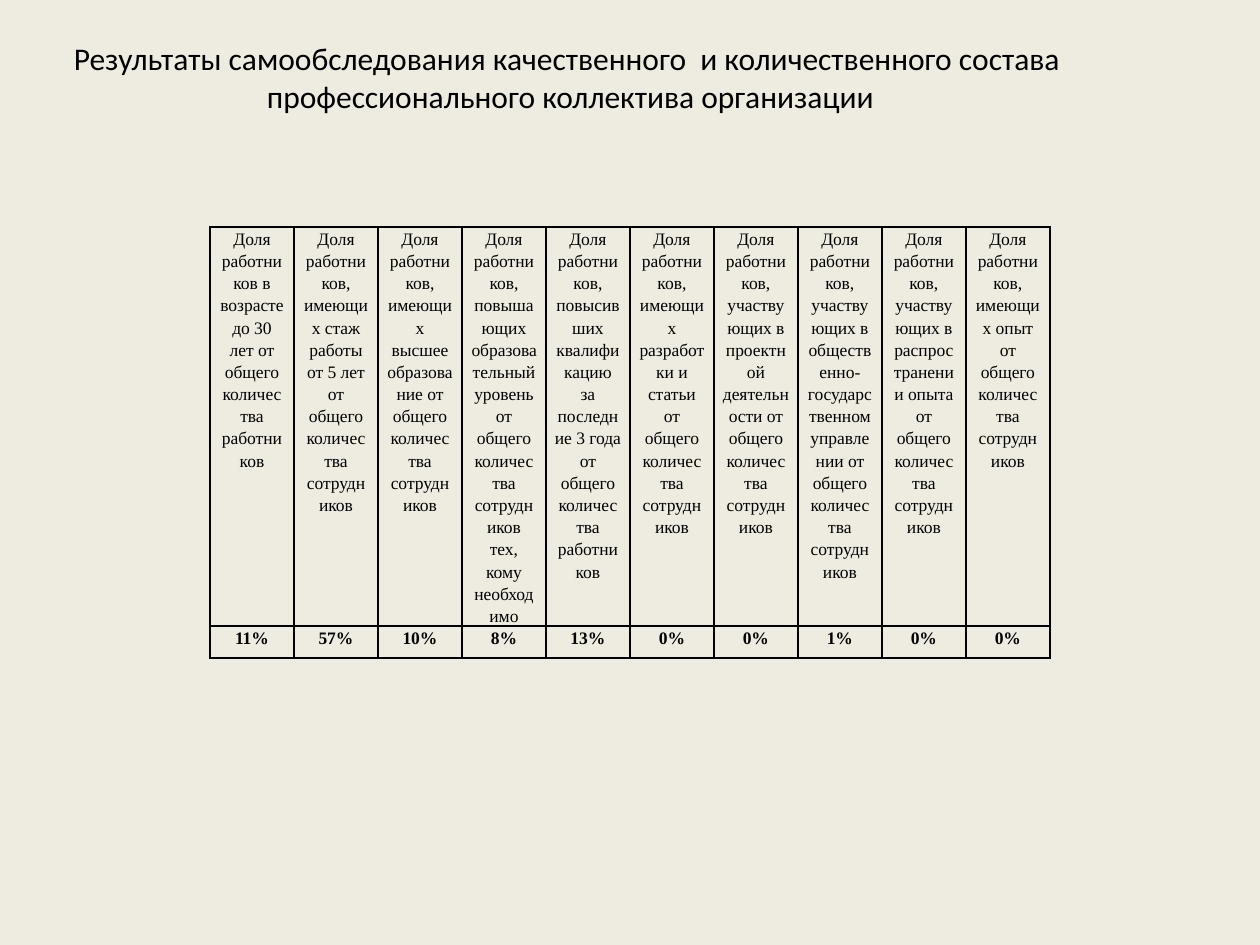
from copy import deepcopy

from lxml.etree import SubElement
from pptx import Presentation
from pptx.dml.color import RGBColor
from pptx.enum.text import MSO_ANCHOR, PP_ALIGN
from pptx.oxml.ns import qn
from pptx.util import Pt

EMU_PER_PX = 914400 / 126
BLACK = "000000"
CREAM = "EEECE1"

TITLE_LINES = [
    "Результаты самообследования качественного  и количественного состава",
    " профессионального коллектива организации",
]
STAFF_SHARES = [
    ("Доля работников в возрасте до 30 лет от общего количества работников", "11%"),
    ("Доля работников, имеющих стаж работы от 5 лет от общего количества сотрудников", "57%"),
    ("Доля работников, имеющих высшее образование от общего количества сотрудников", "10%"),
    ("Доля работников, повышающих образовательный уровень от общего количества "
     "сотрудников тех, кому необходимо", "8%"),
    ("Доля работников, повысивших квалификацию за последние 3 года от общего "
     "количества работников", "13%"),
    ("Доля работников, имеющих разработки и статьи от общего количества сотрудников", "0%"),
    ("Доля работников, участвующих в проектной деятельности от общего количества "
     "сотрудников", "0%"),
    ("Доля работников, участвующих в общественно-государственном управлении от общего "
     "количества сотрудников", "1%"),
    ("Доля работников, участвующих в распространении опыта от общего количества "
     "сотрудников", "0%"),
    ("Доля работников, имеющих опыт от общего количества сотрудников", "0%"),
]


def px(length):
    """Turn whole pixels into EMU."""
    return round(length * EMU_PER_PX)


def color(hex_string):
    """Turn a hex string into a colour."""
    return RGBColor.from_string(hex_string)


def add_span(para, text, font_name, size, bold=False):
    """Add one formatted run to a paragraph."""
    span = para.add_run()
    span.text = text
    span.font.name = font_name
    span.font.size = Pt(size)
    span.font.bold = bold
    span.font.color.rgb = color(BLACK)
    return span


def place_title(page, left, top, width, height):
    """Fill the title placeholder with its two centred lines."""
    box = page.shapes.title
    box.left, box.top, box.width, box.height = map(px, (left, top, width, height))
    frame = box.text_frame
    frame.word_wrap = True
    frame.vertical_anchor = MSO_ANCHOR.TOP
    frame.margin_top = px(1)
    para = frame.paragraphs[0]
    para.alignment = PP_ALIGN.CENTER
    first_line, second_line = TITLE_LINES
    span = add_span(para, first_line, "Calibri", 18)
    para.add_line_break()
    para._p.find(qn("a:br")).append(deepcopy(span._r.rPr))
    add_span(para, second_line, "Calibri", 18)


def draw_borders(cell, hex_string, points):
    """Outline all four sides of a table cell."""
    properties = cell._tc.get_or_add_tcPr()
    for side in ("a:lnL", "a:lnR", "a:lnT", "a:lnB"):
        line = SubElement(properties, qn(side), w=str(Pt(points)))
        fill = SubElement(line, qn("a:solidFill"))
        SubElement(fill, qn("a:srgbClr"), val=hex_string)


def fill_cell(cell, text, bold):
    """Write and format one table cell."""
    draw_borders(cell, BLACK, 1)
    cell.fill.background()
    cell.margin_left = cell.margin_right = px(9)
    cell.margin_top = cell.margin_bottom = 0
    cell.vertical_anchor = MSO_ANCHOR.TOP
    para = cell.text_frame.paragraphs[0]
    para.alignment = PP_ALIGN.CENTER
    para.line_spacing = 1.15
    add_span(para, text, "Times New Roman", 10, bold)


def place_table(page, left, top, width, row_heights):
    """Build the table of staff shares with equal columns."""
    count = len(STAFF_SHARES)
    frame = page.shapes.add_table(
        len(row_heights), count, px(left), px(top), px(width), px(sum(row_heights)))
    table = frame.table
    table.first_row = table.horz_banding = False
    for row, height in zip(table.rows, row_heights):
        row.height = px(height)
    for index, (heading, share) in enumerate(STAFF_SHARES):
        table.columns[index].width = px(width // count)
        fill_cell(table.cell(0, index), heading, False)
        fill_cell(table.cell(1, index), share, True)


def main():
    """Build the deck and save it."""
    deck = Presentation()
    deck.slide_width, deck.slide_height = px(1260), px(945)
    page = deck.slides.add_slide(deck.slide_layouts[5])
    page.background.fill.solid()
    page.background.fill.fore_color.rgb = color(CREAM)
    place_title(page, 0, 38, 1134, 158)
    place_table(page, 210, 227, 840, (399, 32))
    deck.save("out.pptx")


if __name__ == "__main__":
    main()
